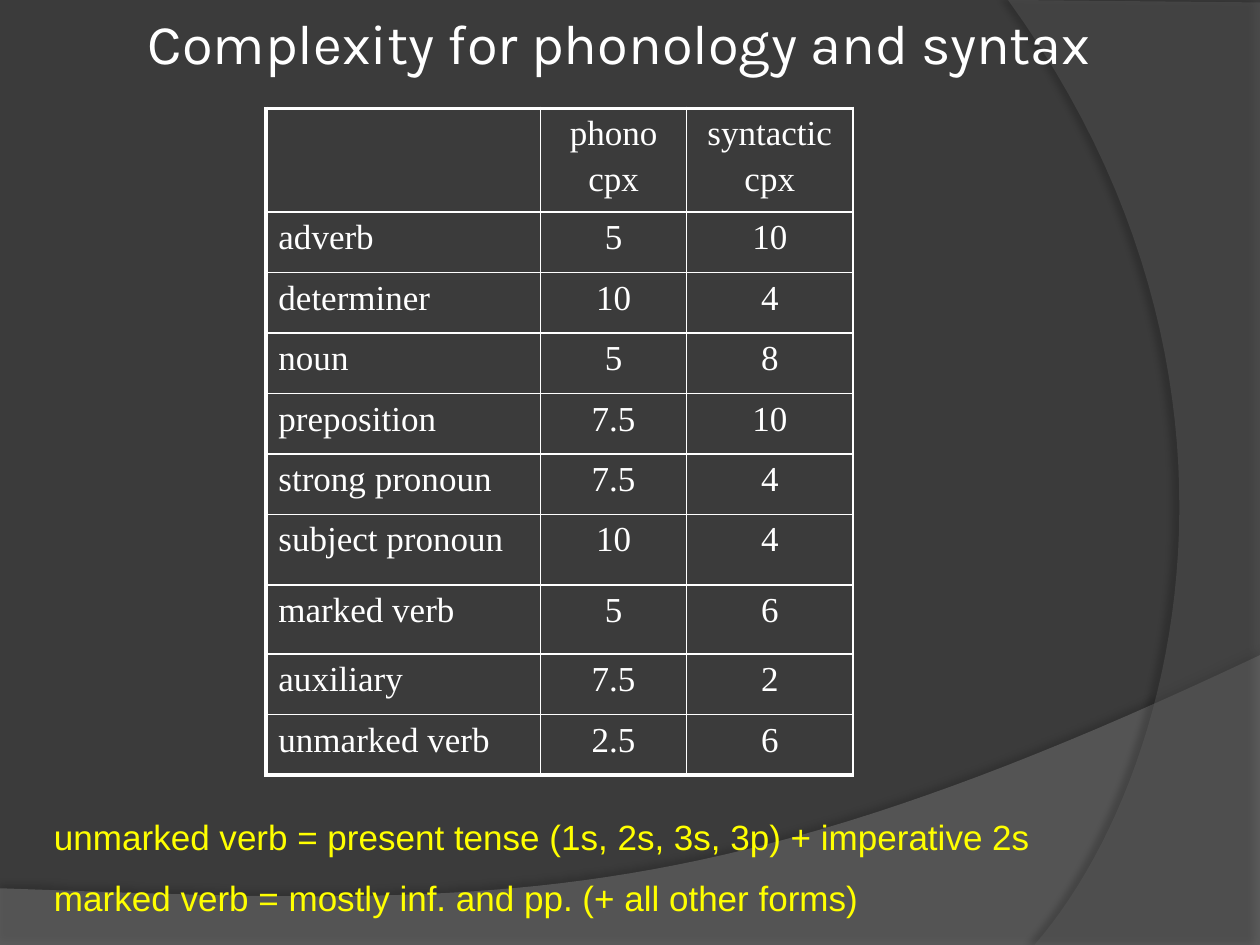
"""Build a slide with a table of phonological and syntactic complexity by word class."""
import dataclasses

import pptx
import pptx.dml.color
import pptx.enum.text
import pptx.oxml
import pptx.oxml.ns
import pptx.util

WIDTH, HEIGHT = 10, 7.5
TITLE = "Complexity for phonology and syntax"
ROWS = [
    ("", "phono\ncpx", "syntactic\ncpx"),
    ("adverb", "5", "10"),
    ("determiner", "10", "4"),
    ("noun", "5", "8"),
    ("preposition", "7.5", "10"),
    ("strong pronoun", "7.5", "4"),
    ("subject pronoun", "10", "4"),
    ("marked verb", "5", "6"),
    ("auxiliary", "7.5", "2"),
    ("unmarked verb", "2.5", "6"),
]
NOTES = (
    "unmarked verb = present tense (1s, 2s, 3s, 3p) + imperative 2s\n"
    "marked verb = mostly inf. and pp. (+ all other forms)"
)
COLUMN_WIDTHS = (2.18, 1.16, 1.32)
ROW_HEIGHT = 0.48
TALL_ROWS = {0: 0.51, 6: 0.56, 7: 0.55}
SWEEPS = [
    dict(corners=[(0, 7.05), (0, 7.5), (10, 7.5), (10, 5.2)],
         bend=[(5.59, 7.29), (3.91, 7.19), (0, 7.05)],
         color="7F7F7F", opacity=45, shade=35, distance=3.5, angle=270),
    dict(corners=[(10, 0.02), (10, 7.5), (8.21, 7.5)],
         bend=[(9.35, 6.19), (10.18, 3), (8, 0)],
         color="5E5E5E", opacity=40, shade=45, distance=4, angle=180),
]


@dataclasses.dataclass(frozen=True)
class Theme:
    background: str = "3B3B3B"
    text: str = "FFFFFF"
    note: str = "FFFF00"
    title_font: str = "Karla"
    table_font: str = "Times New Roman"
    note_font: str = "Arial"
    title_size: int = 32
    body_size: int = 20
    outer_line: float = 2.25
    inner_line: float = 1


THEME = Theme()
CENTER = pptx.enum.text.PP_ALIGN.CENTER
LEFT = pptx.enum.text.PP_ALIGN.LEFT


def rgb(value):
    return pptx.dml.color.RGBColor.from_string(value)


def inches(*values):
    return [pptx.util.Inches(value) for value in values]


def xml(body):
    return pptx.oxml.parse_xml(body.replace(" ", f" {pptx.oxml.ns.nsdecls('a')} ", 1))


def write(frame, text, *, font, size, color, align=LEFT, before=0):
    for index, line in enumerate(text.split("\n")):
        para = frame.paragraphs[0] if index == 0 else frame.add_paragraph()
        para.alignment = align
        para.space_before = pptx.util.Pt(before)
        span = para.add_run()
        span.text = line
        span.font.name = font
        span.font.size = pptx.util.Pt(size)
        span.font.color.rgb = rgb(color)


def add_text(page, area, text, *, margin=None, **style):
    box = page.shapes.add_textbox(*inches(*area))
    frame = box.text_frame
    frame.word_wrap = True
    if margin is not None:
        frame.margin_left = frame.margin_right = pptx.util.Inches(margin)
        frame.vertical_anchor = pptx.enum.text.MSO_ANCHOR.MIDDLE
    write(frame, text, **style)


def curve(start, bend, steps=48):
    points = [start, *bend]
    for step in range(1, steps + 1):
        t = step / steps
        weights = ((1 - t) ** 3, 3 * t * (1 - t) ** 2, 3 * t * t * (1 - t), t ** 3)
        yield tuple(sum(w * p[axis] for w, p in zip(weights, points)) for axis in (0, 1))


def add_sweep(page, *, corners, bend, color, opacity, shade, distance, angle):
    outline = [inches(*point) for point in [*corners, *curve(corners[-1], bend)]]
    builder = page.shapes.build_freeform(*outline[0])
    builder.add_line_segments(outline[1:], close=True)
    shape = builder.convert_to_shape()
    shape.shadow.inherit = False
    shape.fill.solid()
    shape.fill.fore_color.rgb = rgb(color)
    shape.line.fill.background()
    solid = shape.fill.fore_color._xFill.find(".//" + pptx.oxml.ns.qn("a:srgbClr"))
    solid.append(xml(f'<a:alpha val="{opacity * 1000}"/>'))
    effects = shape._element.spPr.find(pptx.oxml.ns.qn("a:effectLst"))
    effects.append(xml(
        f'<a:outerShdw blurRad="{pptx.util.Pt(4)}" dist="{pptx.util.Pt(distance)}" '
        f'dir="{angle * 60000}" algn="ctr" rotWithShape="0"><a:srgbClr val="000000">'
        f'<a:alpha val="{shade * 1000}"/></a:srgbClr></a:outerShdw>'))


def add_borders(cell, heavy):
    properties = cell._tc.get_or_add_tcPr()
    for side in "LRTB":
        width = THEME.outer_line if side in heavy else THEME.inner_line
        properties.append(xml(
            f'<a:ln{side} w="{pptx.util.Pt(width)}"><a:solidFill>'
            f'<a:srgbClr val="{THEME.text}"/></a:solidFill></a:ln{side}>'))


def add_grid(page):
    heights = [TALL_ROWS.get(index, ROW_HEIGHT) for index in range(len(ROWS))]
    area = inches(2.11, 0.86, sum(COLUMN_WIDTHS), sum(heights))
    table = page.shapes.add_table(len(ROWS), len(COLUMN_WIDTHS), *area).table
    table.first_row = table.horz_banding = False
    for column, width in zip(table.columns, COLUMN_WIDTHS):
        column.width = pptx.util.Inches(width)
    for row, height in zip(table.rows, heights):
        row.height = pptx.util.Inches(height)
    for r, values in enumerate(ROWS):
        for c, value in enumerate(values):
            cell = table.cell(r, c)
            heavy = ("T" if r == 0 else "") + ("L" if c == 0 else "")
            heavy += "B" if r == len(ROWS) - 1 else ""
            add_borders(cell, heavy)
            cell.fill.background()
            write(cell.text_frame, value, font=THEME.table_font, size=THEME.body_size,
                  color=THEME.text, align=CENTER if c else LEFT, before=4)


def main():
    deck = pptx.Presentation()
    deck.slide_width, deck.slide_height = inches(WIDTH, HEIGHT)
    page = deck.slides.add_slide(deck.slide_layouts[6])
    page.background.fill.solid()
    page.background.fill.fore_color.rgb = rgb(THEME.background)
    for sweep in SWEEPS:
        add_sweep(page, **sweep)
    add_text(page, (0.67, 0, 8.5, 0.67), TITLE, margin=0.05, font=THEME.title_font,
             size=THEME.title_size, color=THEME.text, align=CENTER)
    add_grid(page)
    add_text(page, (0.33, 6.42, 8.08, 0.93), NOTES, font=THEME.note_font,
             size=THEME.body_size, color=THEME.note, before=11)
    deck.save("out.pptx")


if __name__ == "__main__":
    main()
